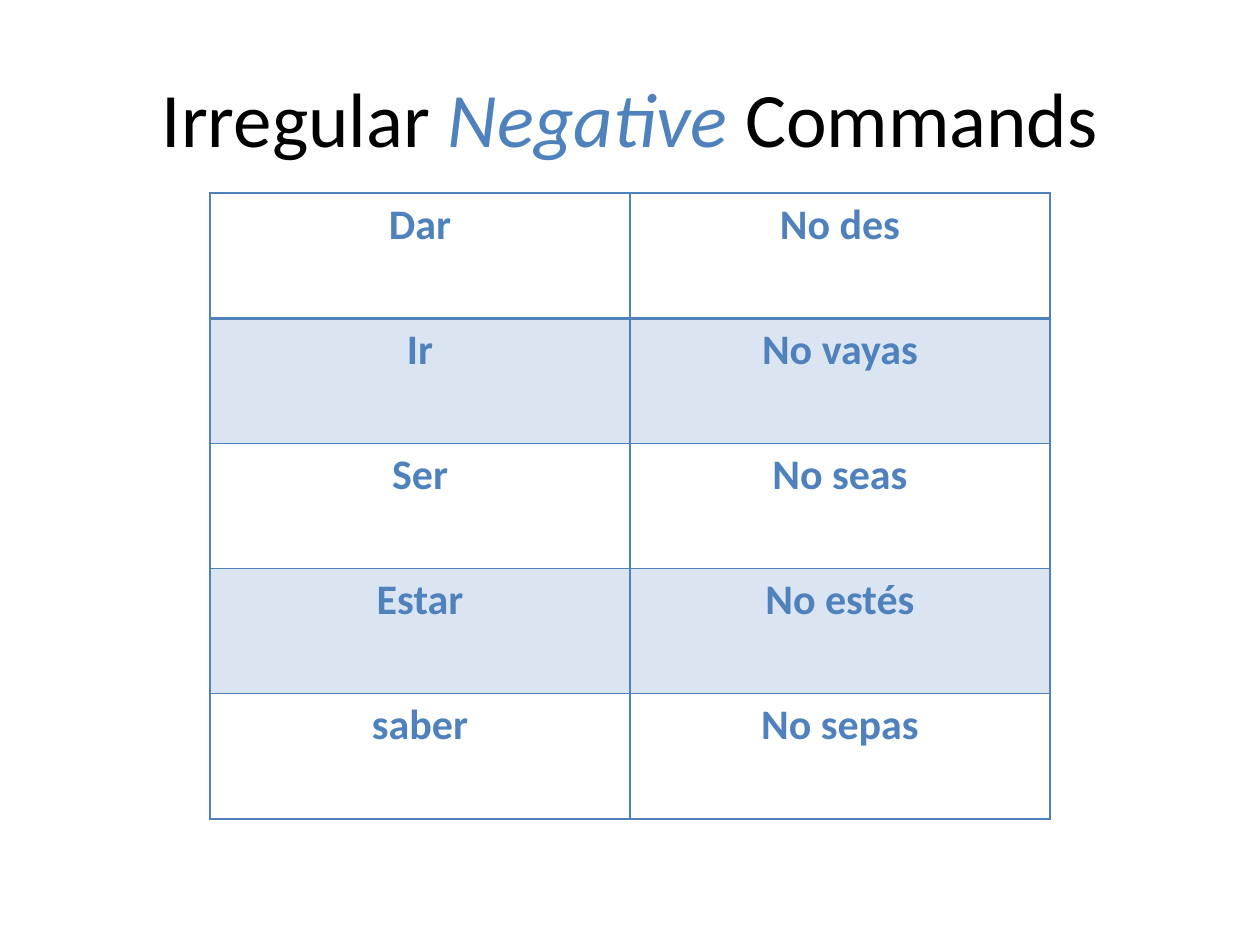
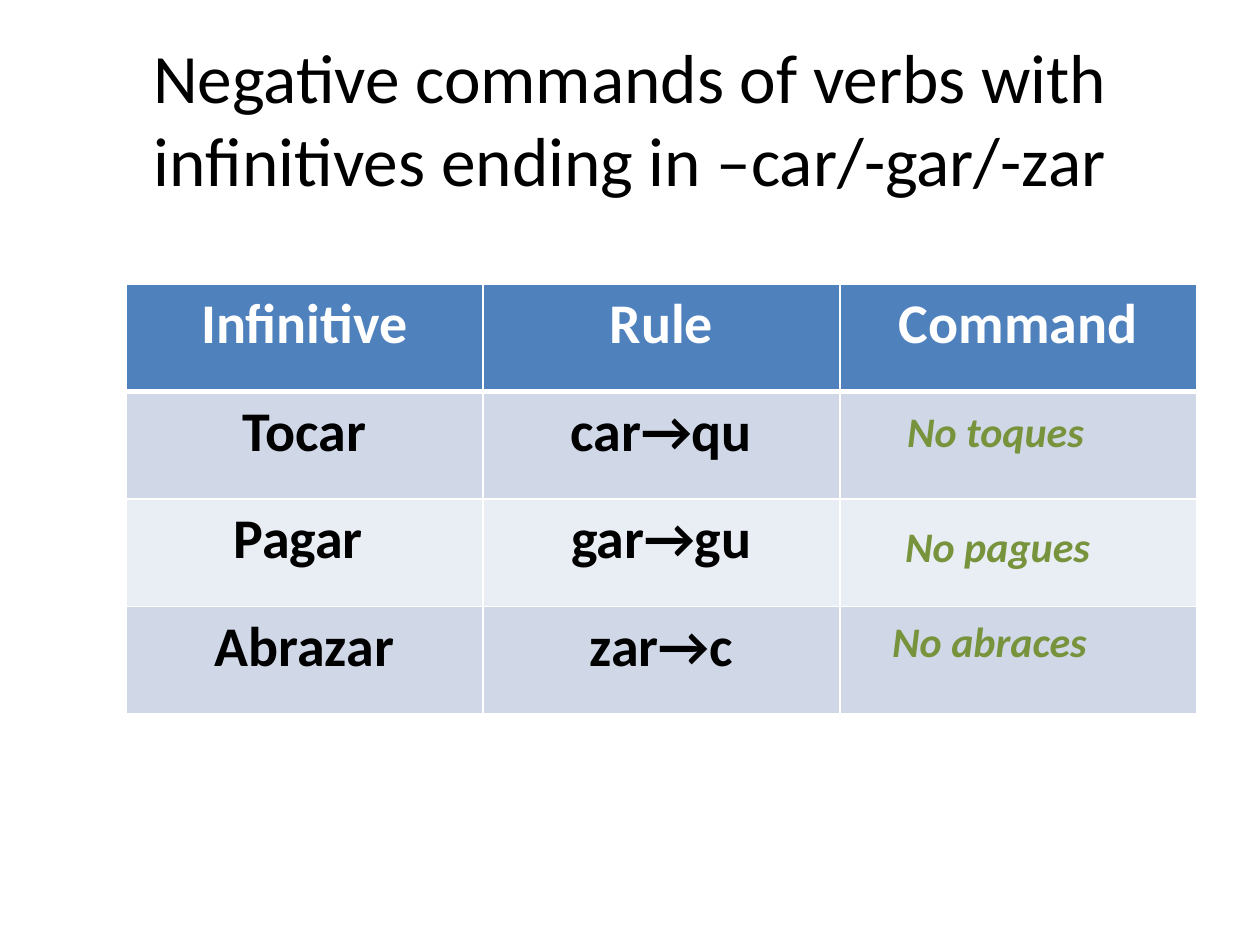
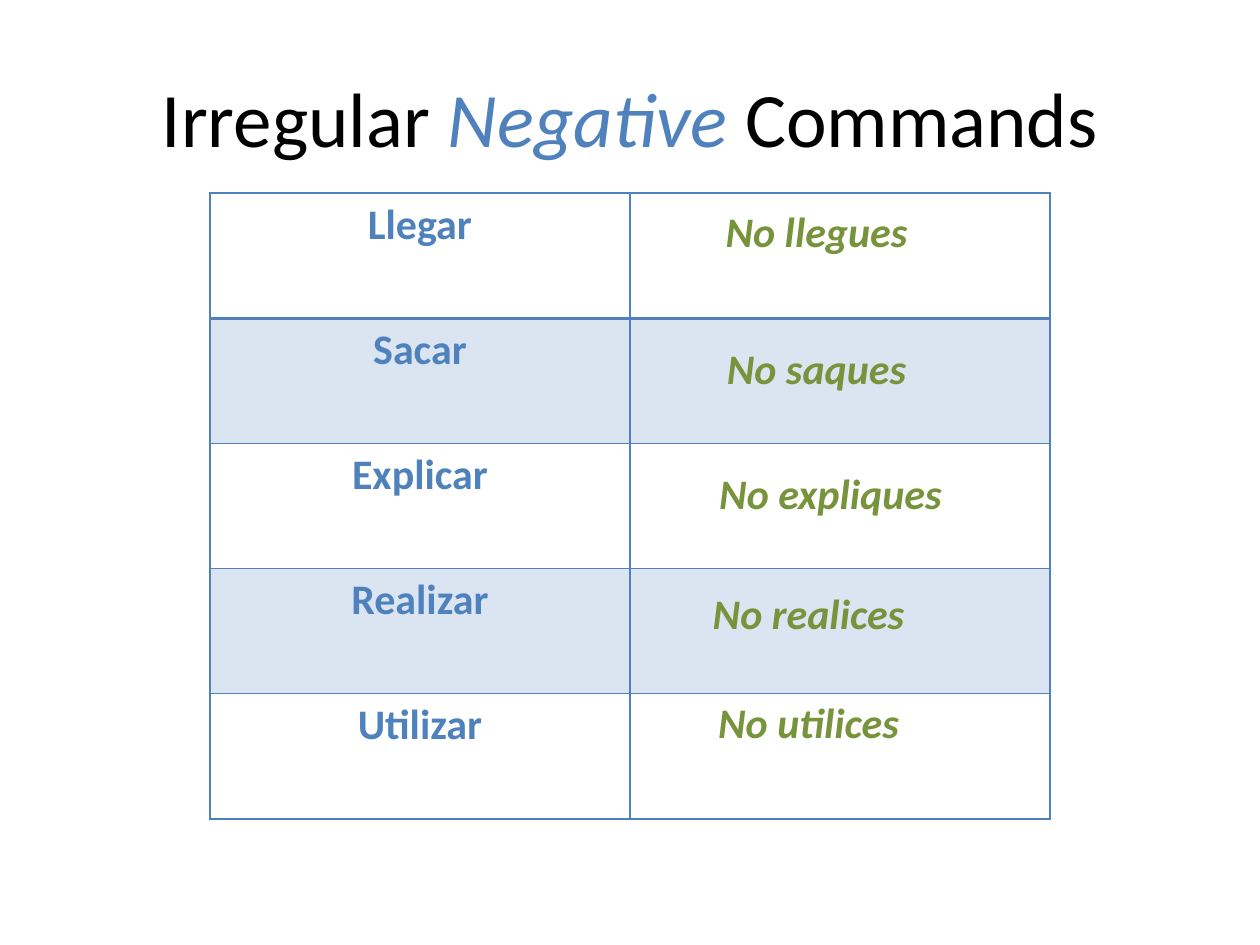
from lxml.etree import SubElement
from pptx import Presentation
from pptx.dml.color import RGBColor
from pptx.enum.text import MSO_ANCHOR, PP_ALIGN
from pptx.oxml.ns import qn
from pptx.util import Emu, Pt

BLACK = RGBColor(0x00, 0x00, 0x00)
WHITE = RGBColor(0xFF, 0xFF, 0xFF)
BLUE = RGBColor(0x4F, 0x81, 0xBD)
GREEN = RGBColor(0x77, 0x93, 0x3C)
BAND_DARK = RGBColor(0xD0, 0xD8, 0xE8)
BAND_LIGHT = RGBColor(0xE9, 0xED, 0xF4)

FONT = "Calibri"
BLANK_LAYOUT = 6
IRREGULAR_TITLE = [("Irregular ", False), ("Negative ", True), ("Commands", False)]


def px(length):
    return Emu(round(length * 914400 / 126))


class Deck:
    def __init__(self):
        self.presentation = Presentation()
        self.presentation.slide_width = px(1260)
        self.presentation.slide_height = px(945)
        self.slide = None

    def add_slide(self):
        layout = self.presentation.slide_layouts[BLANK_LAYOUT]
        self.slide = self.presentation.slides.add_slide(layout)

    def style(self, paragraph, size, color=None, bold=False, italic=None):
        paragraph.alignment = PP_ALIGN.CENTER
        font = paragraph.font
        font.name, font.size, font.bold, font.italic = FONT, Pt(size), bold, italic
        if color is not None:
            font.color.rgb = color

    def text_frame(self, left, top, width, height):
        shape = self.slide.shapes.add_textbox(px(left), px(top), px(width), px(height))
        shape.text_frame.word_wrap = True
        return shape.text_frame

    def title(self, parts, size=44):
        """Add the title from (text, emphasised) parts."""
        frame = self.text_frame(63, 38, 1134, 158)
        frame.vertical_anchor = MSO_ANCHOR.MIDDLE
        paragraph = frame.paragraphs[0]
        self.style(paragraph, size)
        for text, emphasised in parts:
            run = paragraph.add_run()
            run.text = text
            run.font.italic = emphasised
            run.font.color.rgb = BLUE if emphasised else BLACK

    def answer(self, text, left, top, width=247):
        paragraph = self.text_frame(left, top, width, 63).paragraphs[0]
        paragraph.text = text
        self.style(paragraph, 24, GREEN, bold=True, italic=True)

    def border(self, cell, side, color, points):
        properties = cell._tc.get_or_add_tcPr()
        line = SubElement(properties, qn(f"a:ln{side}"), w=str(Pt(points)))
        fill = SubElement(line, qn("a:solidFill"))
        SubElement(fill, qn("a:srgbClr"), val=str(color))

    def fill(self, cell, color, opacity):
        if color is None:
            cell.fill.background()
            return
        cell.fill.solid()
        cell.fill.fore_color.rgb = color
        if opacity < 100:
            color_element = cell._tc.tcPr.find(f".//{qn('a:solidFill')}/{qn('a:srgbClr')}[last()]")
            for solid in cell._tc.tcPr.findall(qn("a:solidFill")):
                color_element = solid.find(qn("a:srgbClr"))
            SubElement(color_element, qn("a:alpha"), val=str(opacity * 1000))

    def table(self, rows, box, size, line_color, first_rule, row_style):
        """Add a table; row_style(row) gives text colour, fill and opacity."""
        graphic = self.slide.shapes.add_table(len(rows), len(rows[0]), *map(px, box))
        table = graphic.table
        table.first_row = table.horz_banding = False
        for row, texts in enumerate(rows):
            text_color, fill_color, opacity = row_style(row)
            widths = {
                "L": 1,
                "R": 1,
                "T": first_rule if row == 1 else 1,
                "B": first_rule if row == 0 else 1,
            }
            for column, text in enumerate(texts):
                cell = table.cell(row, column)
                cell.text = text
                self.style(cell.text_frame.paragraphs[0], size, text_color, bold=True)
                for side, points in widths.items():
                    self.border(cell, side, line_color, points)
                self.fill(cell, fill_color, opacity)

    def verb_table(self, rows):
        def row_style(row):
            return BLUE, BLUE if row % 2 else None, 20

        self.table(rows, (210, 193, 840, 626), 24, BLUE, 2, row_style)

    def rule_table(self, rows):
        def row_style(row):
            if row == 0:
                return WHITE, BLUE, 100
            return BLACK, BAND_DARK if row % 2 else BAND_LIGHT, 100

        self.table(rows, (126, 284, 1071, 430), 32, WHITE, 3, row_style)


def irregular_verbs(deck):
    deck.add_slide()
    deck.title(IRREGULAR_TITLE)
    deck.verb_table([
        ("Dar", "No des"),
        ("Ir", "No vayas"),
        ("Ser", "No seas"),
        ("Estar", "No estés"),
        ("saber", "No sepas"),
    ])


def spelling_rules(deck):
    deck.add_slide()
    title = "Negative commands of verbs with infinitives ending in –car/-gar/-zar"
    deck.title([(title, False)], size=39.6)
    deck.rule_table([
        ("Infinitive", "Rule", "Command"),
        ("Tocar", "car→qu", ""),
        ("Pagar ", "gar→gu", ""),
        ("Abrazar", "zar→c", ""),
    ])
    deck.answer("No toques", 872, 399)
    deck.answer("No pagues", 874, 514)
    deck.answer("No abraces", 866, 609)


def spelling_practice(deck):
    deck.add_slide()
    deck.title(IRREGULAR_TITLE)
    verbs = ("Llegar", "Sacar", "Explicar", "Realizar", "Utilizar")
    deck.verb_table([(verb, "") for verb in verbs])
    deck.answer("No llegues", 693, 199)
    deck.answer("No saques", 693, 336)
    deck.answer("No expliques", 685, 461, width=291)
    deck.answer("No realices", 685, 581)
    deck.answer("No utilices", 685, 690)


def main():
    deck = Deck()
    irregular_verbs(deck)
    spelling_rules(deck)
    spelling_practice(deck)
    deck.presentation.save("out.pptx")


if __name__ == "__main__":
    main()
